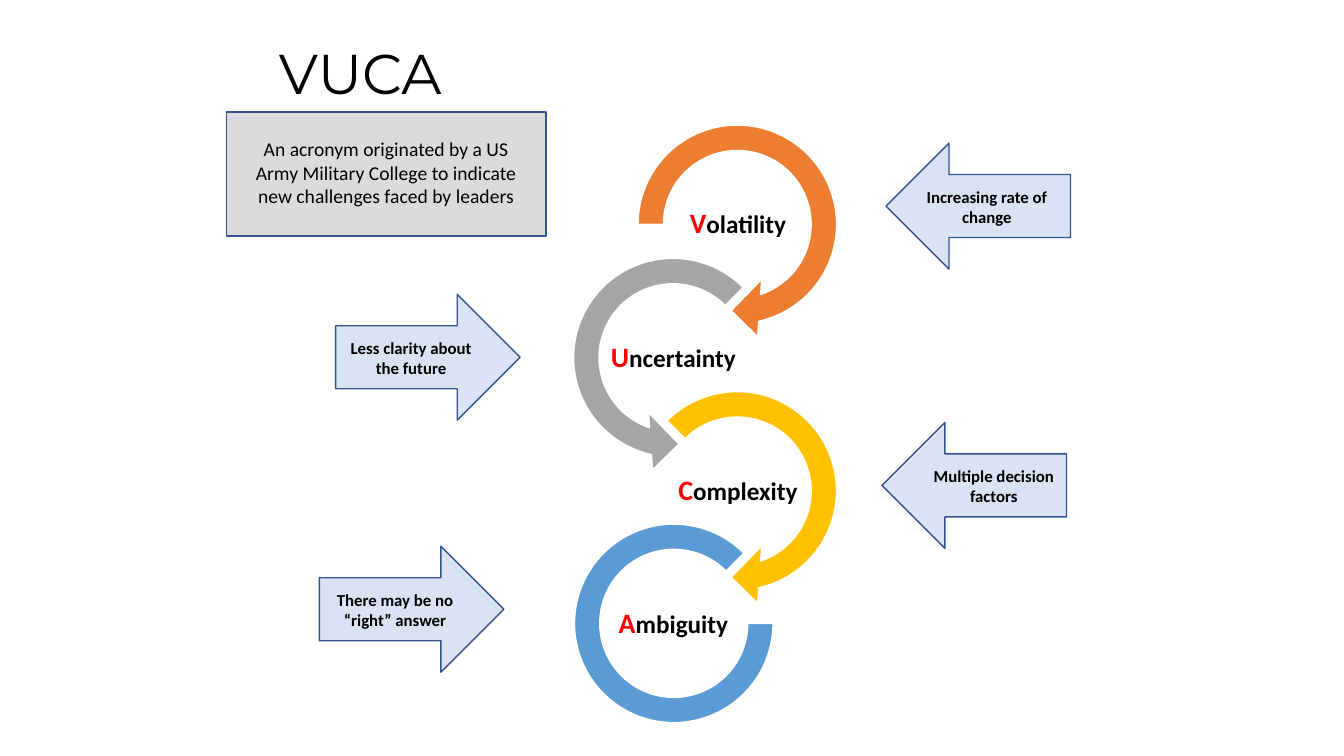
"""Build the VUCA slide: four linked rings, each explained by a block arrow."""
import pptx
import pptx.dml.color
import pptx.enum.shapes
import pptx.enum.text
import pptx.util

Pt = pptx.util.Pt
RGBColor = pptx.dml.color.RGBColor
SHAPE = pptx.enum.shapes.MSO_SHAPE
ALIGN = pptx.enum.text.PP_ALIGN
ANCHOR = pptx.enum.text.MSO_ANCHOR
AUTO_SIZE = pptx.enum.text.MSO_AUTO_SIZE

BLACK = RGBColor(0x00, 0x00, 0x00)
WHITE = RGBColor(0xFF, 0xFF, 0xFF)
RED = RGBColor(0xFF, 0x00, 0x00)
ORANGE = RGBColor(0xED, 0x7D, 0x31)
GRAY = RGBColor(0xA5, 0xA5, 0xA5)
GOLD = RGBColor(0xFF, 0xC0, 0x00)
BLUE = RGBColor(0x5B, 0x9B, 0xD5)
PALE_BLUE = RGBColor(0xDA, 0xE3, 0xF3)
PALE_GRAY = RGBColor(0xDB, 0xDB, 0xDB)
OUTLINE = RGBColor(0x32, 0x54, 0x91)


def add_figure(shapes, kind, bounds, fill, outline):
    figure = shapes.add_shape(kind, *[Pt(length) for length in bounds])
    figure.shadow.inherit = False
    figure.fill.solid()
    figure.fill.fore_color.rgb = fill
    figure.line.color.rgb = outline
    figure.line.width = Pt(1)
    return figure


def add_text(shapes, bounds, spans, bold=True):
    box = shapes.add_textbox(*[Pt(length) for length in bounds])
    box.text_frame.word_wrap = True
    para = box.text_frame.paragraphs[0]
    para.alignment = ALIGN.CENTER
    for text, size, color in spans:
        span = para.add_run()
        span.text = text
        span.font.name = "Calibri"
        span.font.size = Pt(size)
        span.font.bold = bold
        span.font.color.rgb = color
    return box


deck = pptx.Presentation()
deck.slide_width = Pt(960)
deck.slide_height = Pt(540)
page = deck.slides.add_slide(deck.slide_layouts[5])

title = page.shapes.title
title.left, title.top, title.width, title.height = Pt(192), Pt(24), Pt(168), Pt(55.7)
title.text_frame.auto_size = AUTO_SIZE.NONE
title.text_frame.vertical_anchor = ANCHOR.TOP
para = title.text_frame.paragraphs[0]
para.alignment = ALIGN.LEFT
span = para.add_run()
span.text = "VUCA"
span.font.name = "Montserrat"
span.font.size = Pt(40)
span.font.color.rgb = BLACK

RING_STEP = 95.2
rings = [
    ("Volatility", SHAPE.CIRCULAR_ARROW, (444.2, 77.8, 164.9, 164.9), ORANGE,
     (0.11, 11.42, 45, 108, 0.125), 481),
    ("Uncertainty", SHAPE.LEFT_CIRCULAR_ARROW, (398.2, 77.8 + RING_STEP, 164.9, 164.9), GRAY,
     (0.11, 11.42, 63, 189, 0.125), 434.9),
    ("Complexity", SHAPE.CIRCULAR_ARROW, (444.2, 77.8 + 2 * RING_STEP, 164.9, 164.9), GOLD,
     (0.11, 11.42, 45, 135, 0.125), 481),
    ("Ambiguity", SHAPE.BLOCK_ARC, (410.4, 374.4, 141.8, 141.8), BLUE,
     (0, 189, 0.127), 434.9),
]
ring_group = page.shapes.add_group_shape()
for index, (word, kind, bounds, color, adjustments, label_left) in enumerate(rings):
    ring = add_figure(ring_group.shapes, kind, bounds, color, WHITE)
    for position, value in enumerate(adjustments):
        ring.adjustments[position] = value
    label = add_text(ring_group.shapes, (label_left, 137.6 + index * RING_STEP, 92.2, 46.1),
                     [(word[0], 20, RED), (word[1:], 18, BLACK)])
    frame = label.text_frame
    frame.vertical_anchor = ANCHOR.MIDDLE
    frame.margin_left = frame.margin_right = frame.margin_top = frame.margin_bottom = Pt(0.9)
    frame.paragraphs[0].line_spacing = 0.9

arrows = [
    ("Less clarity about the future", SHAPE.RIGHT_ARROW, 239.8, 210.2, 242.6, 102.2),
    ("Multiple decision factors", SHAPE.LEFT_ARROW, 630, 301.7, 658.8, 102.2),
    ("There may be no “right” answer", SHAPE.RIGHT_ARROW, 228.2, 390.2, 231.1, 102.2),
    ("Increasing rate of change", SHAPE.LEFT_ARROW, 632.9, 102.2, 648, 113.8),
]
for text, kind, left, top, text_left, text_width in arrows:
    arrow_group = page.shapes.add_group_shape()
    add_figure(arrow_group.shapes, kind, (left, top, 131.8, 90), PALE_BLUE, OUTLINE)
    add_text(arrow_group.shapes, (text_left, top + 27.4, text_width, 36), [(text, 12, BLACK)])

add_figure(page.shapes, SHAPE.RECTANGLE, (162, 79.9, 228.2, 88.6), PALE_GRAY, OUTLINE)
add_text(page.shapes, (167.8, 94.3, 216, 58.3),
         [("An acronym originated by a US Army Military College to indicate "
           "new challenges faced by leaders", 14, BLACK)], bold=False)

deck.save("out.pptx")
